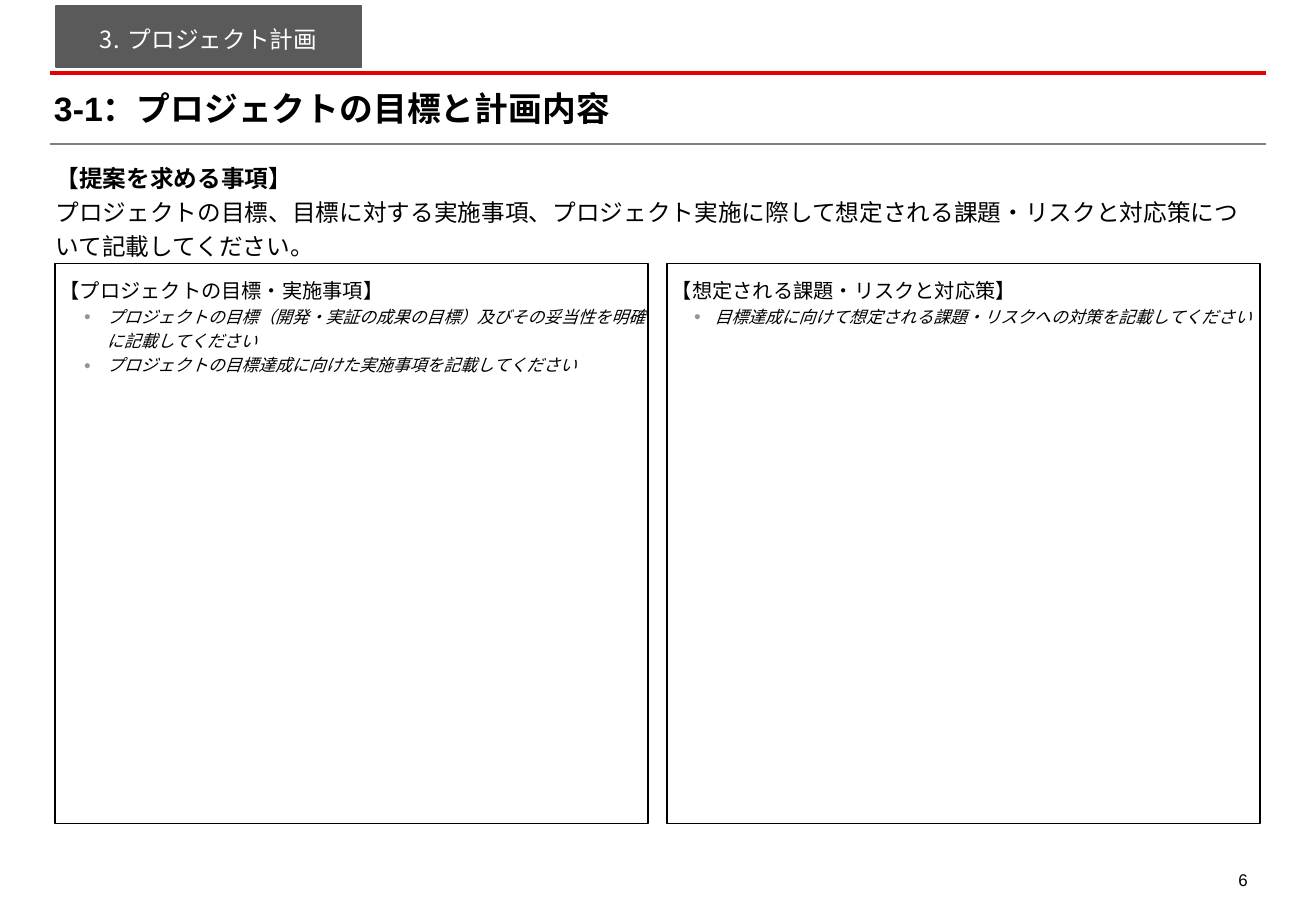
from lxml.etree import SubElement
from pptx import Presentation
from pptx.dml.color import RGBColor
from pptx.enum.shapes import MSO_CONNECTOR, MSO_SHAPE
from pptx.enum.text import MSO_ANCHOR, PP_ALIGN
from pptx.oxml.ns import qn
from pptx.util import Pt

BLACK = RGBColor(0, 0, 0)
WHITE = RGBColor(255, 255, 255)
RED = RGBColor(0xE6, 0, 0)
GRAY = RGBColor(0x80, 0x80, 0x80)
DARK_GRAY = RGBColor(0x5A, 0x5A, 0x5A)
BULLET_GRAY = RGBColor(0x96, 0x96, 0x96)

PANELS = [
    ("【プロジェクトの目標・実施事項】", 28, 13.7, [
        "プロジェクトの目標（開発・実証の成果の目標）及びその妥当性を明確に記載してください",
        "プロジェクトの目標達成に向けた実施事項を記載してください",
    ]),
    ("【想定される課題・リスクと対応策】", 25.2, 12.2, [
        "目標達成に向けて想定される課題・リスクへの対策を記載してください",
    ]),
]


def set_frame(shape, margins, anchor=MSO_ANCHOR.TOP, wrap=True):
    """Set the margins, anchor and wrapping of a shape's text, and return its frame."""
    frame = shape.text_frame
    frame.margin_left, frame.margin_top, frame.margin_right, frame.margin_bottom = map(Pt, margins)
    frame.vertical_anchor = anchor
    frame.word_wrap = wrap
    return frame


def write(frame, text, size, color=BLACK, bold=False, italic=False,
          align=PP_ALIGN.LEFT, spacing=1.2, before=0):
    """Write one paragraph, using the empty first one if it is free."""
    first = frame.paragraphs[0]
    paragraph = frame.add_paragraph() if first.runs else first
    paragraph.add_run().text = text
    paragraph.alignment = align
    paragraph.line_spacing = spacing
    paragraph.space_before = Pt(before)
    font = paragraph.font
    font.name, font.size, font.bold, font.italic = "Arial", Pt(size), bold, italic
    font.color.rgb = color
    return paragraph


def add_bullet(paragraph, margin, hanging, color, percent, kind, **attributes):
    """Give a paragraph a hanging indent and a bullet or number."""
    properties = paragraph._p.get_or_add_pPr()
    properties.set("marL", str(Pt(margin)))
    properties.set("indent", str(-Pt(hanging)))
    bullet_color = SubElement(properties, qn("a:buClr"))
    SubElement(bullet_color, qn("a:srgbClr"), val=str(color))
    SubElement(properties, qn("a:buSzPct"), val=str(percent * 1000))
    SubElement(properties, qn("a:buFont"), typeface="Arial")
    SubElement(properties, qn(kind), **attributes)


def add_text_box(slide, left, top, width, height, margins=(0, 0, 0, 0), **options):
    """Add a text box and return its text frame."""
    box = slide.shapes.add_textbox(Pt(left), Pt(top), Pt(width), Pt(height))
    return set_frame(box, margins, **options)


def add_box(slide, left, top, width, height, fill, line, margins, **options):
    """Add an outlined rectangle and return its text frame."""
    box = slide.shapes.add_shape(MSO_SHAPE.RECTANGLE, Pt(left), Pt(top), Pt(width), Pt(height))
    box.shadow.inherit = False
    box.fill.solid()
    box.fill.fore_color.rgb = fill
    box.line.color.rgb = line
    box.line.width = Pt(1)
    return set_frame(box, margins, **options)


def add_rule(slide, top, color, width):
    """Add a horizontal line across the page."""
    rule = slide.shapes.add_connector(MSO_CONNECTOR.STRAIGHT, Pt(29.5), Pt(top), Pt(750.5), Pt(top))
    rule.line.color.rgb = color
    rule.line.width = Pt(width)
    SubElement(rule._element.spPr, qn("a:effectLst"))


def add_panel(slide, left, heading, margin, hanging, items):
    """Add an answer panel with a heading and bulleted instructions."""
    frame = add_box(slide, left, 156.2, 351.4, 332, WHITE, BLACK, (2.9, 5.8, 1.4, 1.4))
    write(frame, heading, 12)
    for item in items:
        paragraph = write(frame, item, 10, italic=True)
        paragraph.level = 1
        add_bullet(paragraph, margin, hanging, BULLET_GRAY, 70, "a:buChar", char="●")


def add_section_tag(slide):
    """Add the numbered section tag at the top left."""
    frame = add_box(slide, 33, 3.6, 181.4, 36, DARK_GRAY, DARK_GRAY, (1.4, 1.4, 1.4, 1.4),
                    anchor=MSO_ANCHOR.MIDDLE, wrap=False)
    paragraph = write(frame, "プロジェクト計画", 14, WHITE, align=PP_ALIGN.CENTER, before=7)
    add_bullet(paragraph, 16.6, 16.6, WHITE, 100, "a:buAutoNum", type="arabicPeriod", startAt="3")


def main():
    """Build the slide and save it."""
    presentation = Presentation()
    presentation.slide_width, presentation.slide_height = Pt(780), Pt(540)
    slide = presentation.slides.add_slide(presentation.slide_layouts[6])

    page_number = add_text_box(slide, 715, 509.8, 31.7, 20, (7.2, 3.6, 7.2, 3.6), wrap=False)
    write(page_number, "6", 10, align=PP_ALIGN.RIGHT, before=5)
    add_rule(slide, 43.2, RED, 2)
    add_rule(slide, 85.2, GRAY, 1.25)

    title = add_text_box(slide, 32, 52, 713.5, 24.5, anchor=MSO_ANCHOR.MIDDLE)
    write(title, "3-1：プロジェクトの目標と計画内容", 20, bold=True, spacing=1.0)
    request = add_text_box(slide, 33, 93.6, 713.5, 59)
    write(request, "【提案を求める事項】", 14, bold=True)
    write(request, "プロジェクトの目標、目標に対する実施事項、プロジェクト実施に際して"
                   "想定される課題・リスクと対応策について記載してください。", 14)

    for index, panel in enumerate(PANELS):
        add_panel(slide, 32.5 + index * 362.9, *panel)
    add_section_tag(slide)
    presentation.save("out.pptx")


if __name__ == "__main__":
    main()
